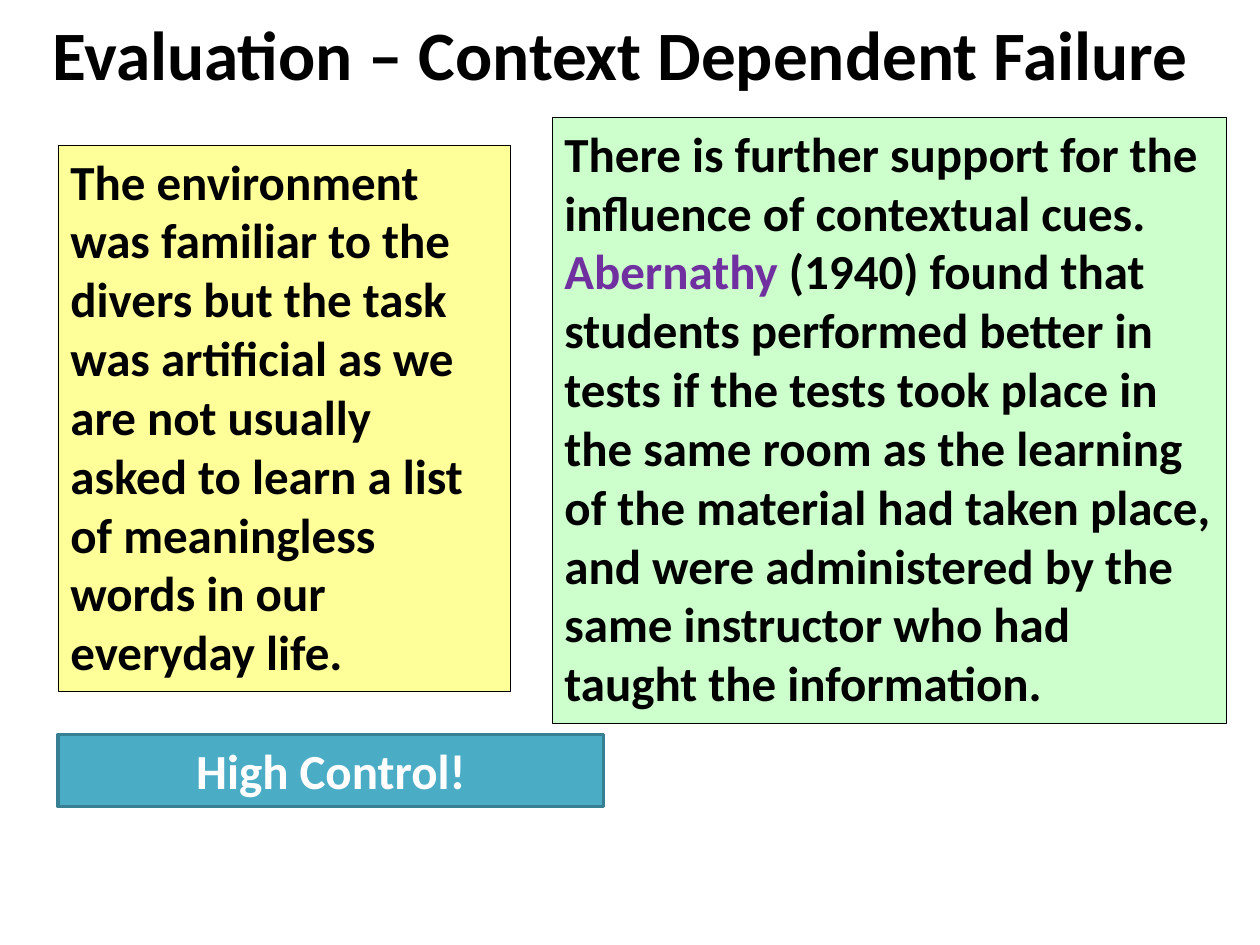
from pptx import Presentation
from pptx.dml.color import RGBColor
from pptx.enum.shapes import MSO_SHAPE
from pptx.enum.text import MSO_ANCHOR, MSO_AUTO_SIZE, PP_ALIGN
from pptx.util import Cm, Pt

BLACK, WHITE, PURPLE = "000000", "FFFFFF", "7030A0"


def color(code):
    return RGBColor.from_string(code)


def write(shape, *parts, size=28, ink=BLACK, align=PP_ALIGN.LEFT,
          anchor=MSO_ANCHOR.TOP, fit=MSO_AUTO_SIZE.SHAPE_TO_FIT_TEXT):
    """Fill a shape with one paragraph; a part is text or (text, colour)."""
    frame = shape.text_frame
    frame.word_wrap = True
    frame.auto_size = fit
    frame.vertical_anchor = anchor
    line = frame.paragraphs[0]
    line.alignment = align
    for part in parts:
        text, tint = (part, ink) if isinstance(part, str) else part
        run = line.add_run()
        run.text = text
        run.font.name = "Calibri"
        run.font.size = Pt(size)
        run.font.bold = True
        run.font.color.rgb = color(tint)


class Deck:
    """Holds the slide and the line style shared by its boxes."""

    edge = BLACK
    weight = 0.25

    def __init__(self, show):
        self.slide = show.slides.add_slide(show.slide_layouts[6])

    def title(self, text, *area):
        box = self.slide.shapes.add_textbox(*map(Cm, area))
        write(box, text, size=39.6, align=PP_ALIGN.CENTER,
              anchor=MSO_ANCHOR.MIDDLE, fit=MSO_AUTO_SIZE.NONE)

    def panel(self, area, fill, *parts, edge=edge, weight=weight, **style):
        box = self.slide.shapes.add_shape(MSO_SHAPE.RECTANGLE, *map(Cm, area))
        box.shadow.inherit = False
        box.fill.solid()
        box.fill.fore_color.rgb = color(fill)
        box.line.color.rgb = color(edge)
        box.line.width = Pt(weight)
        write(box, *parts, **style)


def main():
    show = Presentation()
    show.slide_width, show.slide_height = Cm(25.4), Cm(19.05)
    deck = Deck(show)
    left = 1.17

    deck.title("Evaluation – Context Dependent Failure", 0.3, 0.1, 24.41, 1.93)
    deck.panel((left, 14.81, 11, 1.45), "4BACC6", "High Control!",
               edge="377F92", weight=2, ink=WHITE, align=PP_ALIGN.CENTER)
    deck.panel((left, 2.92, 9.12, 11.02), "FFFF99",
               "The environment was familiar to the divers but the task was "
               "artificial as we are not usually asked to learn a list of "
               "meaningless words in our everyday life.")
    deck.panel((11.13, 2.36, 13.59, 12.22), "CCFFCC",
               "There is further support for the influence of contextual cues.",
               (" Abernathy ", PURPLE),
               "(1940) found that students performed better in tests if the "
               "tests took place in the same room as the learning of the "
               "material had taken place, and were administered by the same "
               "instructor who had taught the information.")
    show.save("out.pptx")


if __name__ == "__main__":
    main()
